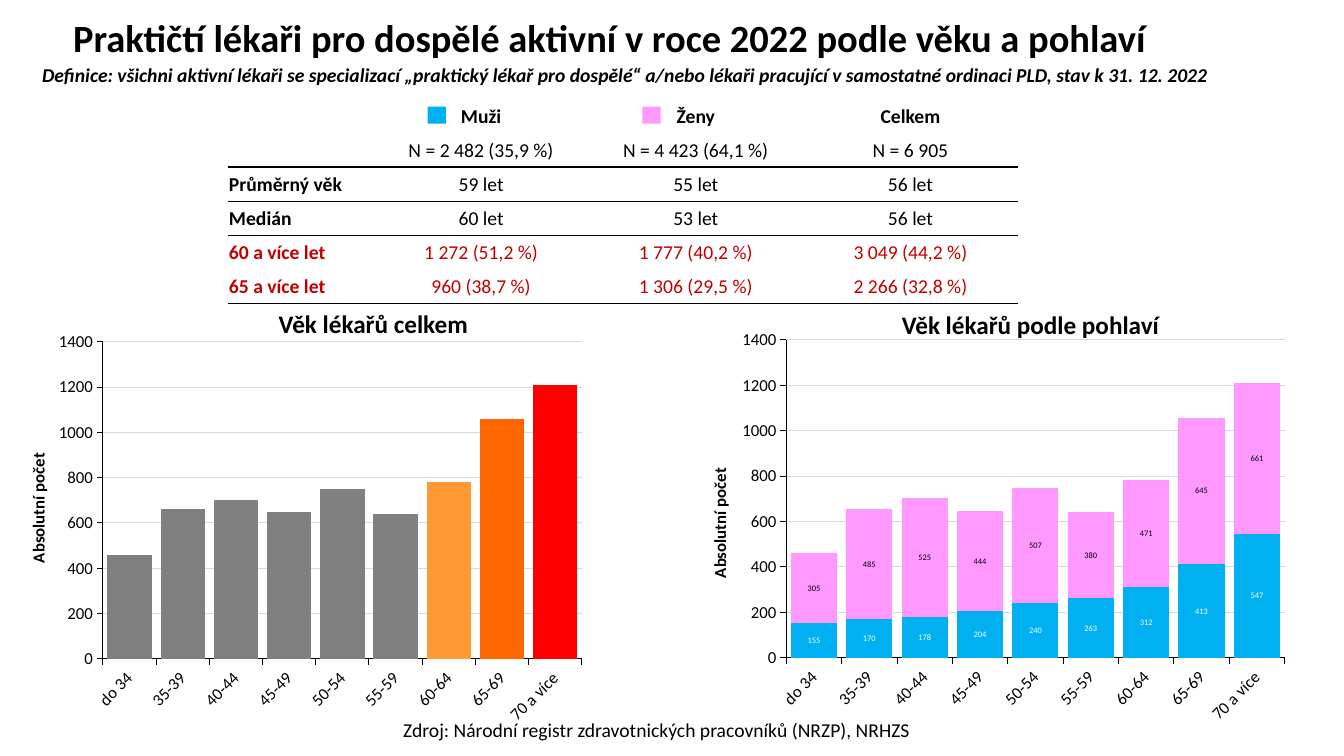
from lxml import etree
from pptx import Presentation
from pptx.chart.data import CategoryChartData
from pptx.dml.color import RGBColor
from pptx.enum.chart import XL_CHART_TYPE as ChartType, XL_TICK_MARK as Tick
from pptx.enum.shapes import MSO_SHAPE as Shape
from pptx.enum.text import MSO_ANCHOR as Anchor, MSO_AUTO_SIZE as AutoSize, PP_ALIGN as Align
from pptx.oxml import parse_xml
from pptx.oxml.ns import nsdecls, qn
from pptx.util import Cm, Pt

FONT = "Calibri"
BLACK = RGBColor(0x00, 0x00, 0x00)
WHITE = RGBColor(0xFF, 0xFF, 0xFF)
GREY = RGBColor(0x80, 0x80, 0x80)
GRID = RGBColor(0xD9, 0xD9, 0xD9)
DARK_RED = RGBColor(0xC0, 0x00, 0x00)
LIGHT_ORANGE = RGBColor(0xFF, 0x99, 0x33)
ORANGE = RGBColor(0xFF, 0x66, 0x00)
RED = RGBColor(0xFF, 0x00, 0x00)
BLUE = RGBColor(0x00, 0xB0, 0xF0)
PINK = RGBColor(0xFF, 0x99, 0xFF)

NO_STYLE = "{2D5ABB26-0587-4C30-8999-92F81FD0307C}"
AGES = ["do 34", "35-39", "40-44", "45-49", "50-54", "55-59", "60-64", "65-69", "70 a více"]
TOTALS = [460, 660, 700, 650, 750, 640, 780, 1060, 1210]
MEN = [155, 170, 178, 204, 240, 263, 312, 413, 547]
WOMEN = [305, 485, 525, 444, 507, 380, 471, 645, 661]
SUMMARY = [
    ["", "Muži", "Ženy", "Celkem"],
    ["", "N = 2 482 (35,9 %)", "N = 4 423 (64,1 %)", "N = 6 905"],
    ["Průměrný věk", "59 let", "55 let", "56 let"],
    ["Medián", "60 let", "53 let", "56 let"],
    ["60 a více let", "1 272 (51,2 %)", "1 777 (40,2 %)", "3 049 (44,2 %)"],
    ["65 a více let", "960 (38,7 %)", "1 306 (29,5 %)", "2 266 (32,8 %)"],
]
RULED_ROWS = {1, 2, 3, 5}
RED_ROWS = {4, 5}


def write(frame, text, size, bold=False, italic=False, align=Align.CENTER, color=BLACK):
    frame.text = text
    paragraph = frame.paragraphs[0]
    paragraph.alignment = align
    font = paragraph.font
    font.name, font.size, font.bold, font.italic = FONT, Pt(size), bold, italic
    font.color.rgb = color
    return paragraph


def add_label(slide, box, text, size, wrap=True, **style):
    label = slide.shapes.add_textbox(*map(Cm, box))
    label.text_frame.word_wrap = wrap
    write(label.text_frame, text, size, **style)
    return label


def add_header(slide, left, top, width):
    title = slide.shapes.title
    title.left, title.top, title.width, title.height = map(Cm, (left, top, width, 1.5))
    frame = title.text_frame
    frame.auto_size = AutoSize.NONE
    frame.vertical_anchor = Anchor.TOP
    heading = write(frame, "Praktičtí lékaři pro dospělé aktivní v roce 2022 podle věku a pohlaví",
                    27.5, bold=True)
    heading.line_spacing = 0.8
    add_label(slide, (left + 0.05, top + 1.01, 32.03, 0.86),
              "Definice: všichni aktivní lékaři se specializací „praktický lékař pro dospělé“ "
              "a/nebo lékaři pracující v samostatné ordinaci PLD, stav k 31. 12. 2022",
              14, bold=True, italic=True, align=Align.LEFT)


def rule_below(cell):
    line = parse_xml(
        f'<a:lnB {nsdecls("a")} w="12700"><a:solidFill><a:srgbClr val="{BLACK}"/>'
        '</a:solidFill></a:lnB>')
    cell._tc.get_or_add_tcPr().insert(0, line)


def add_summary(slide, left, top, first_width=3.68, width=5.41, row_height=0.86):
    # Legend squares beside the two column heads
    for column, color in enumerate((BLUE, PINK)):
        square = slide.shapes.add_shape(
            Shape.RECTANGLE, Cm(left + first_width + column * width + 1.36), Cm(top + 0.2),
            Cm(0.46), Cm(0.43))
        square.shadow.inherit = False
        square.fill.solid()
        square.fill.fore_color.rgb = color
        square.line.fill.background()

    # Summary table
    rows, columns = len(SUMMARY), len(SUMMARY[0])
    graphic = slide.shapes.add_table(
        rows, columns, Cm(left), Cm(top),
        Cm(first_width + (columns - 1) * width), Cm(rows * row_height))
    graphic.element.xpath(".//a:tableStyleId")[0].text = NO_STYLE
    summary = graphic.table
    summary.first_row = summary.horz_banding = False
    for index, column in enumerate(summary.columns):
        column.width = Cm(width if index else first_width)
    for r, texts in enumerate(SUMMARY):
        summary.rows[r].height = Cm(row_height)
        for c, text in enumerate(texts):
            cell = summary.cell(r, c)
            cell.fill.background()
            cell.vertical_anchor = Anchor.MIDDLE
            cell.margin_left = cell.margin_right = cell.margin_top = Cm(0.03)
            cell.margin_bottom = 0
            write(cell.text_frame, text, 14, bold=r == 0 or c == 0,
                  align=Align.CENTER if c else Align.LEFT,
                  color=DARK_RED if r in RED_ROWS else BLACK)
            if r in RULED_ROWS:
                rule_below(cell)


def set_plot_area(chart, x, y, w, h):
    plot_area = chart.element.xpath("c:chart/c:plotArea")[0]
    for old in plot_area.findall(qn("c:layout")):
        plot_area.remove(old)
    layout = etree.Element(qn("c:layout"))
    manual = etree.SubElement(layout, qn("c:manualLayout"))
    settings = {"layoutTarget": "inner", "xMode": "edge", "yMode": "edge",
                "x": x, "y": y, "w": w, "h": h}
    for name, value in settings.items():
        etree.SubElement(manual, qn(f"c:{name}")).set("val", str(value))
    plot_area.insert(0, layout)


def add_age_chart(slide, box, kind, series, heading, heading_offset, axis_label_offset):
    """series: (name, values, color); offsets run from the top left of box."""
    left, top, width, height = box
    ages = CategoryChartData()
    ages.categories = AGES
    for name, values, _ in series:
        ages.add_series(name, values)
    chart = slide.shapes.add_chart(kind, *map(Cm, box), ages).chart
    chart.has_legend = chart.has_title = False
    chart.font.name, chart.font.size = FONT, Pt(12)
    chart.font.color.rgb = BLACK

    # Axes
    count_axis, age_axis = chart.value_axis, chart.category_axis
    count_axis.minimum_scale, count_axis.maximum_scale = 0, 1400
    count_axis.major_unit = 200
    count_axis.has_major_gridlines = True
    gridline = count_axis.major_gridlines.format.line
    for line, color in ((count_axis.format.line, BLACK), (age_axis.format.line, BLACK),
                        (gridline, GRID)):
        line.width = Pt(0.75)
        line.color.rgb = color
    for axis in (count_axis, age_axis):
        axis.major_tick_mark, axis.minor_tick_mark = Tick.OUTSIDE, Tick.NONE
        axis.tick_labels.font.size = Pt(12)
    chart.element.xpath(".//c:catAx/c:txPr/a:bodyPr")[0].set("rot", "-2700000")
    set_plot_area(chart, 0.1, 0.045, 0.88, 0.775)

    # Columns
    plot = chart.plots[0]
    plot.gap_width = 20
    plot.vary_by_categories = False
    for bars, (_, _, color) in zip(plot.series, series):
        bars.format.fill.solid()
        bars.format.fill.fore_color.rgb = color

    # Heading and turned axis label
    dx, dy = heading_offset
    add_label(slide, (left + dx, top + dy, 10.54, 1.02), heading, 18, bold=True)
    label_width, label_height = 3.33, 0.76
    axis_label = add_label(
        slide, (left - 0.26 - label_width / 2, top + axis_label_offset - label_height / 2,
                label_width, label_height), "Absolutní počet", 12, wrap=False, bold=True)
    axis_label.rotation = 270
    return plot


def add_total_chart(slide, box):
    plot = add_age_chart(slide, box, ChartType.COLUMN_CLUSTERED, [("Celkem", TOTALS, GREY)],
                         "Věk lékařů celkem", (2.92, -0.5), 4.65)
    for index, color in enumerate((LIGHT_ORANGE, ORANGE, RED), start=6):
        fill = plot.series[0].points[index].format.fill
        fill.solid()
        fill.fore_color.rgb = color


def add_gender_chart(slide, box):
    plot = add_age_chart(slide, box, ChartType.COLUMN_STACKED,
                         [("Muži", MEN, BLUE), ("Ženy", WOMEN, PINK)],
                         "Věk lékařů podle pohlaví", (2.31, -0.43), 5.08)
    plot.overlap = 100
    for bars, color in zip(plot.series, (WHITE, BLACK)):
        labels = bars.data_labels
        labels.show_value = True
        labels.font.size = Pt(6)
        labels.font.color.rgb = color


def main():
    prs = Presentation()
    prs.slide_width, prs.slide_height = Cm(33.87), Cm(19.05)
    slide = prs.slides.add_slide(prs.slide_layouts[5])
    add_header(slide, 0.76, 0.46, 29.21)
    add_total_chart(slide, (1.22, 8.15, 13.72, 10.31))
    add_gender_chart(slide, (18.39, 8.1, 14.27, 10.34))
    add_summary(slide, 5.74, 2.49)
    # Source line
    add_label(slide, (8.08, 17.96, 16.94, 0.86),
              "Zdroj: Národní registr zdravotnických pracovníků (NRZP), NRHZS", 14)
    prs.save("out.pptx")


if __name__ == "__main__":
    main()
